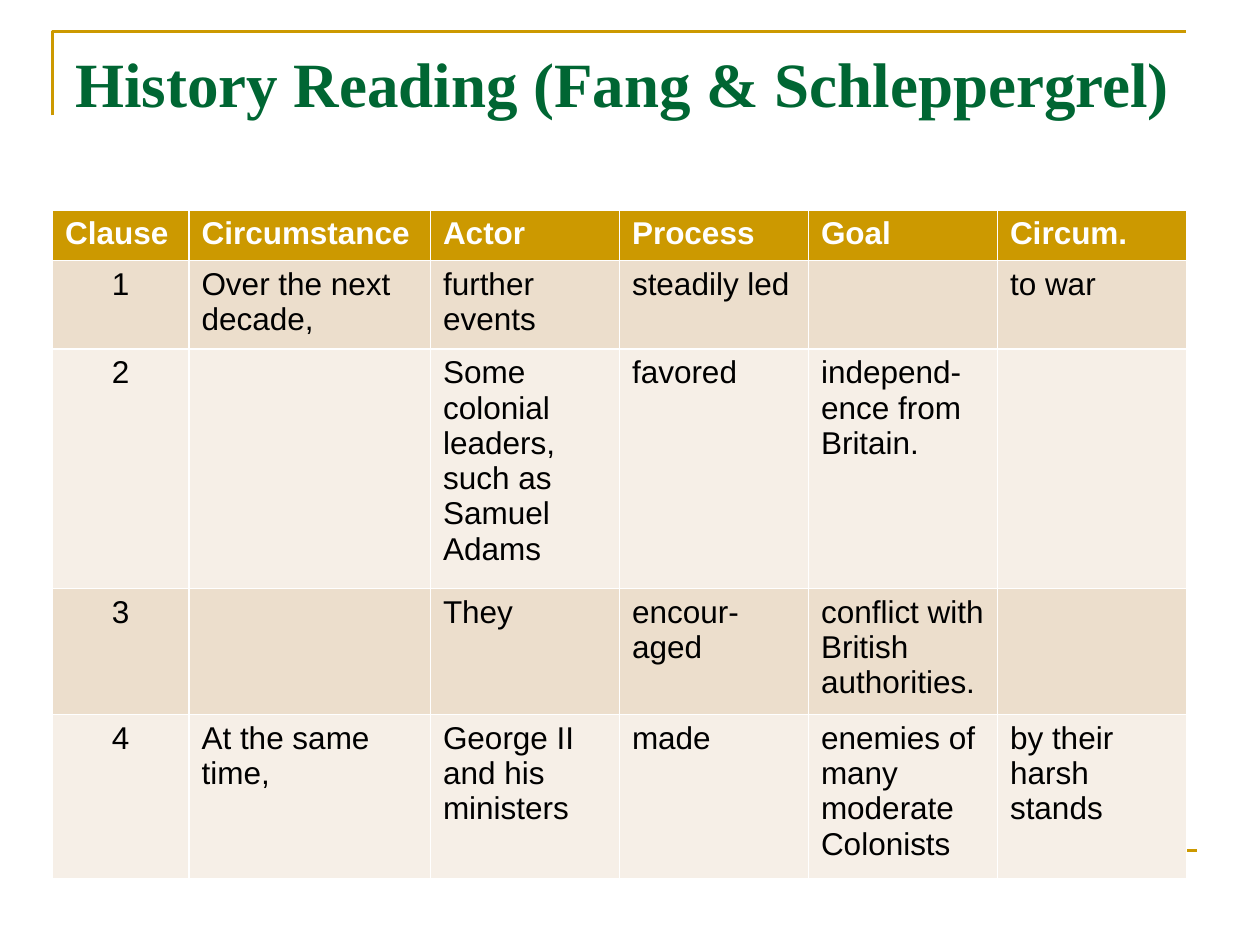
from lxml import etree
from pptx import Presentation
from pptx.dml.color import RGBColor
from pptx.enum import shapes, text
from pptx.oxml.ns import qn
from pptx.util import Pt

COLORS = {
    "gold": "CC9900", "green": "006633", "white": "FFFFFF",
    "black": "000000", "tan": "ECDECC", "cream": "F6EFE7",
}
TITLE = "History Reading (Fang & Schleppergrel)"
ROWS = [
    ["Clause", "Circumstance", "Actor", "Process", "Goal", "Circum."],
    ["1", "Over the next decade,", "further events", "steadily led", "", "to war"],
    ["2", "", "Some colonial leaders, such as Samuel Adams", "favored",
     "independ-ence from Britain.", ""],
    ["3", "", "They", "encour-aged", "conflict with\nBritish authorities.", ""],
    ["4", "At the same time,", "George II and his ministers", "made",
     "enemies of many moderate Colonists", "by their harsh stands"],
]
COL_WIDTHS = [78, 138, 108, 108, 108, 108]
ROW_HEIGHTS = [29, 48, 128, 67.5, 87.5]
LEFT, TABLE_TOP, WIDTH = 30, 120, 648


def rgb(name):
    return RGBColor.from_string(COLORS[name])


def style_font(p, name, size, color, bold):
    f = p.font
    f.name, f.size, f.bold = name, Pt(size), bold
    f.color.rgb = rgb(color)


def style_rule(sp):
    sp.line.color.rgb = rgb("gold")
    sp.line.width = Pt(1.5)


def add_rules(s):
    fb = s.shapes.build_freeform(Pt(LEFT), Pt(66))
    fb.add_line_segments([(Pt(LEFT), Pt(18)), (Pt(LEFT + WIDTH), Pt(18))], close=False)
    corner = fb.convert_to_shape()
    corner.fill.background()
    corner.shadow.inherit = False
    style_rule(corner)
    footer = s.shapes.add_connector(
        shapes.MSO_CONNECTOR.STRAIGHT, Pt(36), Pt(486), Pt(36 + WIDTH), Pt(486))
    style_rule(footer)
    etree.SubElement(footer._element.spPr, qn("a:effectLst"))


def add_title(s):
    tf = s.shapes.add_textbox(Pt(36), Pt(21.6), Pt(WIDTH), Pt(90)).text_frame
    tf.word_wrap = True
    tf.vertical_anchor = text.MSO_ANCHOR.TOP
    tf.text = TITLE
    style_font(tf.paragraphs[0], "Times New Roman", 36, "green", True)


def add_clause_table(s):
    table = s.shapes.add_table(
        len(ROWS), len(COL_WIDTHS), Pt(LEFT), Pt(TABLE_TOP),
        Pt(WIDTH), Pt(sum(ROW_HEIGHTS))).table
    for col, width in zip(table.columns, COL_WIDTHS):
        col.width = Pt(width)
    for i, (row, height) in enumerate(zip(ROWS, ROW_HEIGHTS)):
        table.rows[i].height = Pt(height)
        header = i == 0
        fill = "gold" if header else ("cream", "tan")[i % 2]
        for j, words in enumerate(row):
            cell = table.cell(i, j)
            cell.fill.solid()
            cell.fill.fore_color.rgb = rgb(fill)
            cell.text = words
            for p in cell.text_frame.paragraphs:
                style_font(p, "Arial", 18, "white" if header else "black", header)
                if j == 0 and not header:
                    p.alignment = text.PP_ALIGN.CENTER


def main():
    prs = Presentation()
    prs.slide_width, prs.slide_height = Pt(720), Pt(540)
    s = prs.slides.add_slide(prs.slide_layouts[6])
    add_rules(s)
    add_title(s)
    add_clause_table(s)
    prs.save("out.pptx")


if __name__ == "__main__":
    main()
